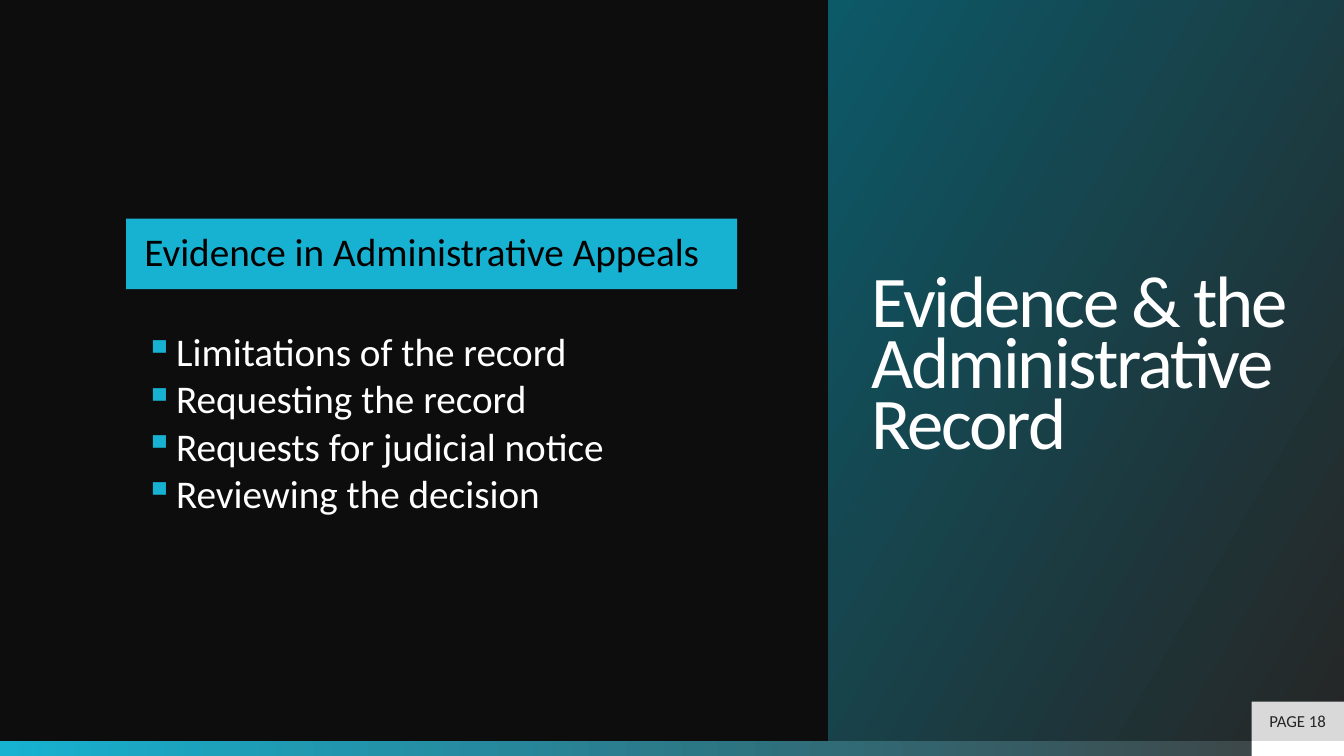
from lxml import etree
from pptx import Presentation
from pptx.dml.color import RGBColor
from pptx.enum import shapes, text
from pptx.oxml.ns import qn
from pptx.util import Cm, Pt

FONT = "Calibri"
NIGHT = RGBColor(0x0D, 0x0D, 0x0D)
CYAN = RGBColor(0x17, 0xB2, 0xD1)
TEAL = RGBColor(0x0C, 0x59, 0x68)
CHARCOAL = RGBColor(0x26, 0x26, 0x26)
GREY = RGBColor(0x40, 0x40, 0x40)
SILVER = RGBColor(0xD9, 0xD9, 0xD9)
WHITE = RGBColor(0xFF, 0xFF, 0xFF)
BLACK = RGBColor(0x00, 0x00, 0x00)

WIDTH, HEIGHT = 33.87, 19.05
STRIP_HEIGHT = 0.38
BODY_HEIGHT = HEIGHT - STRIP_HEIGHT
TITLE_WIDTH = 13
TAB_WIDTH, TAB_HEIGHT = 2.33, 0.99


def add_box(slide, box, fill=None, gradient=None, angle=0):
    """Add a borderless rectangle; box is left, top, width, height in cm."""
    shape = slide.shapes.add_shape(
        shapes.MSO_SHAPE.RECTANGLE, *(Cm(length) for length in box))
    shape.shadow.inherit = False
    shape.line.fill.background()
    if gradient:
        shape.fill.gradient()
        shape.fill.gradient_angle = angle
        for stop, color, position in zip(shape.fill.gradient_stops, gradient, (0, 1)):
            stop.color.rgb = color
            stop.position = position
    else:
        shape.fill.solid()
        shape.fill.fore_color.rgb = fill
    return shape


def add_bullet(paragraph, hanging):
    properties = paragraph._p.get_or_add_pPr()
    properties.set("marL", str(Cm(hanging)))
    properties.set("indent", str(-Cm(hanging)))
    color = etree.SubElement(properties, qn("a:buClr"))
    etree.SubElement(color, qn("a:srgbClr"), val=str(CYAN))
    etree.SubElement(properties, qn("a:buChar"), char="▪")


def write(shape, lines, size, color, insets=(0.25, 0.13, 0.25, 0.13),
          anchor=text.MSO_ANCHOR.MIDDLE, align=text.PP_ALIGN.LEFT,
          line_spacing=1.0, space_after=0, hanging=0, tracking=0):
    frame = shape.text_frame
    frame.word_wrap = True
    frame.vertical_anchor = anchor
    (frame.margin_left, frame.margin_top,
     frame.margin_right, frame.margin_bottom) = (Cm(inset) for inset in insets)
    for index, line in enumerate(lines):
        paragraph = frame.add_paragraph() if index else frame.paragraphs[0]
        paragraph.alignment = align
        paragraph.line_spacing = line_spacing
        paragraph.space_after = Pt(space_after)
        if hanging:
            add_bullet(paragraph, hanging)
        run = paragraph.add_run()
        run.text = line
        run.font.name = FONT
        run.font.size = Pt(size)
        run.font.color.rgb = color
        if tracking:
            run.font._element.set("spc", str(int(tracking * 100)))


def add_bottom_strip(slide, box):
    left, top, width, height = box
    add_box(slide, box, gradient=(CYAN, GREY))
    add_box(slide, (left + width - TAB_WIDTH, top, TAB_WIDTH, height), WHITE)


def add_title_panel(slide, box, title):
    panel = add_box(slide, box, gradient=(CHARCOAL, TEAL), angle=150)
    write(panel, [title], 52, WHITE, insets=(1.09, 0.13, 1.09, 0.13),
          line_spacing=0.7, tracking=-1.5)


def add_topic(slide, box, heading, points):
    left, top, width, height = box
    # Bulleted points
    points_box = slide.shapes.add_textbox(*(Cm(length) for length in box))
    write(points_box, points, 28, WHITE, insets=(1.32, 3.76, 1.32, 0.56),
          anchor=text.MSO_ANCHOR.TOP, line_spacing=0.9, space_after=3.6,
          hanging=0.79)
    # Heading band
    margin = 0.85
    band = add_box(slide, (left + margin, top + 0.89, width - 2 * margin, 1.78), CYAN)
    write(band, [heading], 28, BLACK, insets=(0.46, 0, 0.46, 0), line_spacing=0.9)


def add_page_tab(slide, box, label):
    tab = add_box(slide, box, SILVER)
    write(tab, [label], 12, CHARCOAL, align=text.PP_ALIGN.CENTER)


def main():
    presentation = Presentation()
    presentation.slide_width, presentation.slide_height = Cm(WIDTH), Cm(HEIGHT)
    slide = presentation.slides.add_slide(presentation.slide_layouts[6])
    slide.background.fill.solid()
    slide.background.fill.fore_color.rgb = NIGHT

    add_bottom_strip(slide, (0, BODY_HEIGHT, WIDTH, STRIP_HEIGHT))
    add_title_panel(slide, (WIDTH - TITLE_WIDTH, 0, TITLE_WIDTH, BODY_HEIGHT),
                    "Evidence & the Administrative Record")
    add_topic(slide, (2.33, 4.62, 17.1, 9.38),
              "Evidence in Administrative Appeals",
              ["Limitations of the record", "Requesting the record",
               "Requests for judicial notice", "Reviewing the decision"])
    add_page_tab(slide, (WIDTH - TAB_WIDTH, BODY_HEIGHT - TAB_HEIGHT,
                         TAB_WIDTH, TAB_HEIGHT), "PAGE 18")
    presentation.save("out.pptx")


if __name__ == "__main__":
    main()
